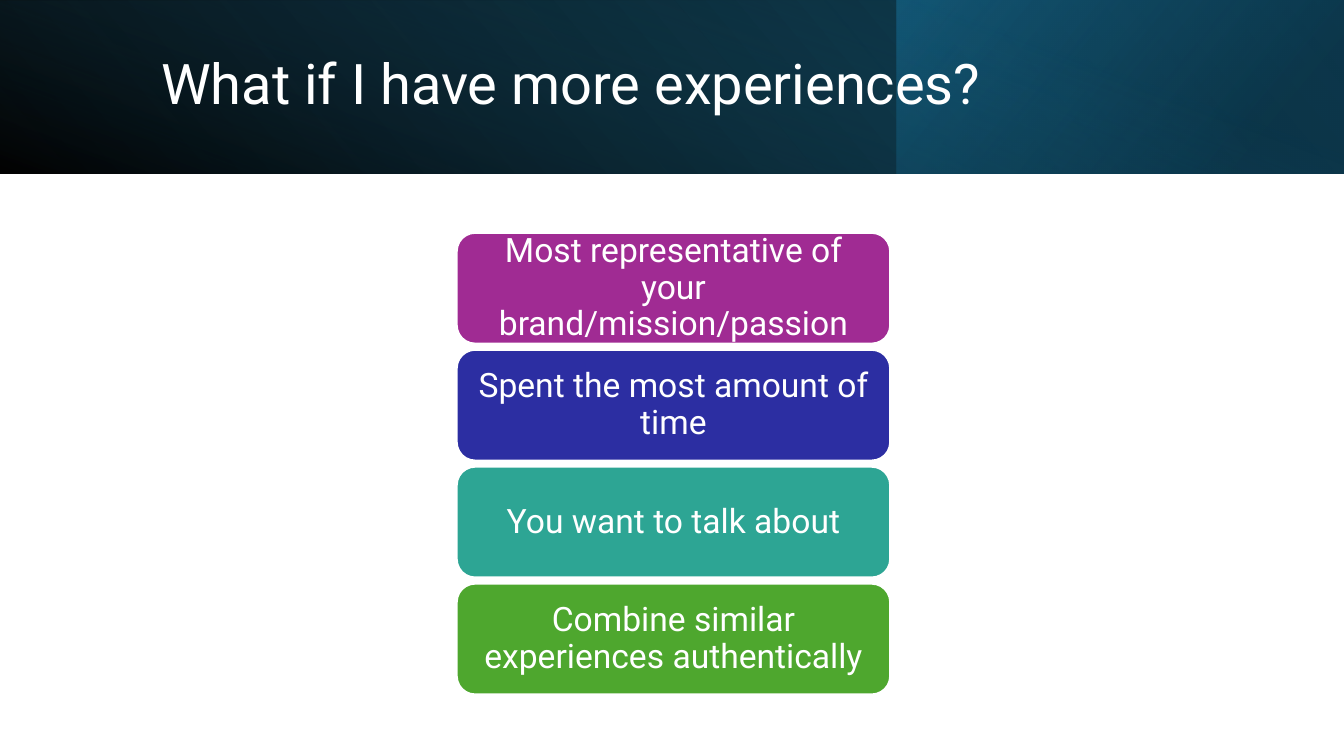
from lxml import etree
from pptx import Presentation
from pptx.dml.color import RGBColor
from pptx.enum.shapes import MSO_SHAPE as Shape
from pptx.enum.text import MSO_ANCHOR as Anchor, MSO_AUTO_SIZE as AutoSize, PP_ALIGN as Align
from pptx.oxml.ns import qn
from pptx.util import Inches, Pt

FONT = "Roboto"
COLORS = {
    "white": "FFFFFF",
    "black": "000000",
    "navy": "104862",
    "deep": "0B3041",
    "blue": "156082",
    "purple": "A02B93",
    "indigo": "2C2EA2",
    "teal": "2DA594",
    "green": "4EA72E",
}
# Box, rotation, mirrored, gradient angle, stops (position, colour, opacity %)
HEADER_BANDS = [
    ((0, 0, 13.33, 1.72), 0, True, 140, [(0, "black", 96), (1, "navy", 100)]),
    ((8.89, 0, 4.44, 1.72), 180, False, 320, [(0.19, "deep", 68), (1, "blue", 79)]),
    ((5.8, -5.8, 1.72, 13.33), 90, False, 340, [(0.23, "blue", 0), (0.99, "black", 74)]),
]
TIPS = [
    ("Most representative of your brand/mission/passion", "purple"),
    ("Spent the most amount of time", "indigo"),
    ("You want to talk about", "teal"),
    ("Combine similar experiences authentically", "green"),
]
TIP_LEFT, TIP_TOP, TIP_WIDTH, TIP_HEIGHT, TIP_STEP = 4.53, 2.31, 4.3, 1.1, 1.16


def color(name):
    return RGBColor.from_string(COLORS[name])


def add_box(page, kind, box):
    shape = page.shapes.add_shape(kind, *(Inches(value) for value in box))
    shape.shadow.inherit = False
    return shape


def write_text(shape, text, size, align):
    frame = shape.text_frame
    frame_format = {
        "text": text,
        "word_wrap": True,
        "auto_size": AutoSize.NONE,
        "vertical_anchor": Anchor.MIDDLE,
        "margin_left": Inches(0.1),
        "margin_right": Inches(0.1),
    }
    for name, value in frame_format.items():
        setattr(frame, name, value)
    para = frame.paragraphs[0]
    para.alignment = align
    para.line_spacing = 0.9
    span = para.runs[0]
    for name, value in {"name": FONT, "size": Pt(size)}.items():
        setattr(span.font, name, value)
    span.font.color.rgb = color("white")


def add_band(page, box, rotation, mirrored, angle, stops):
    band = add_box(page, Shape.RECTANGLE, box)
    band.rotation = rotation
    band.line.fill.background()
    band.fill.gradient()
    band.fill.gradient_angle = angle
    for stop, (position, name, _) in zip(band.fill.gradient_stops, stops):
        stop.position = position
        stop.color.rgb = color(name)
    # Opacity and mirroring
    properties = band._element.spPr
    tones = properties.find(qn("a:gradFill")).iter(qn("a:srgbClr"))
    for tone, (_, _, opacity) in zip(tones, stops):
        etree.SubElement(tone, qn("a:alpha")).set("val", str(opacity * 1000))
    if mirrored:
        properties.find(qn("a:xfrm")).set("flipH", "1")


def place_title(page, text):
    title = page.shapes.title
    box = {"left": 1.5, "top": 0.38, "width": 10.98, "height": 0.96}
    for name, value in box.items():
        setattr(title, name, Inches(value))
    write_text(title, text, 40, Align.LEFT)
    # Bring the title in front of the header bands
    page.shapes._spTree.append(title._element)


def add_tip(page, index, text, fill):
    top = TIP_TOP + index * TIP_STEP
    tip = add_box(page, Shape.ROUNDED_RECTANGLE, (TIP_LEFT, top, TIP_WIDTH, TIP_HEIGHT))
    tip.fill.solid()
    tip.fill.fore_color.rgb = color(fill)
    tip.line.color.rgb = color("white")
    tip.line.width = Pt(1.5)
    write_text(tip, text, 24, Align.CENTER)


def main():
    deck = Presentation()
    deck.slide_width, deck.slide_height = Inches(13.33), Inches(7.5)
    page = deck.slides.add_slide(deck.slide_layouts[5])
    page.background.fill.solid()
    page.background.fill.fore_color.rgb = color("white")

    # Header
    for band in HEADER_BANDS:
        add_band(page, *band)
    place_title(page, "What if I have more experiences?")

    # Stack of tips
    for index, (text, fill) in enumerate(TIPS):
        add_tip(page, index, text, fill)

    deck.save("out.pptx")


if __name__ == "__main__":
    main()
